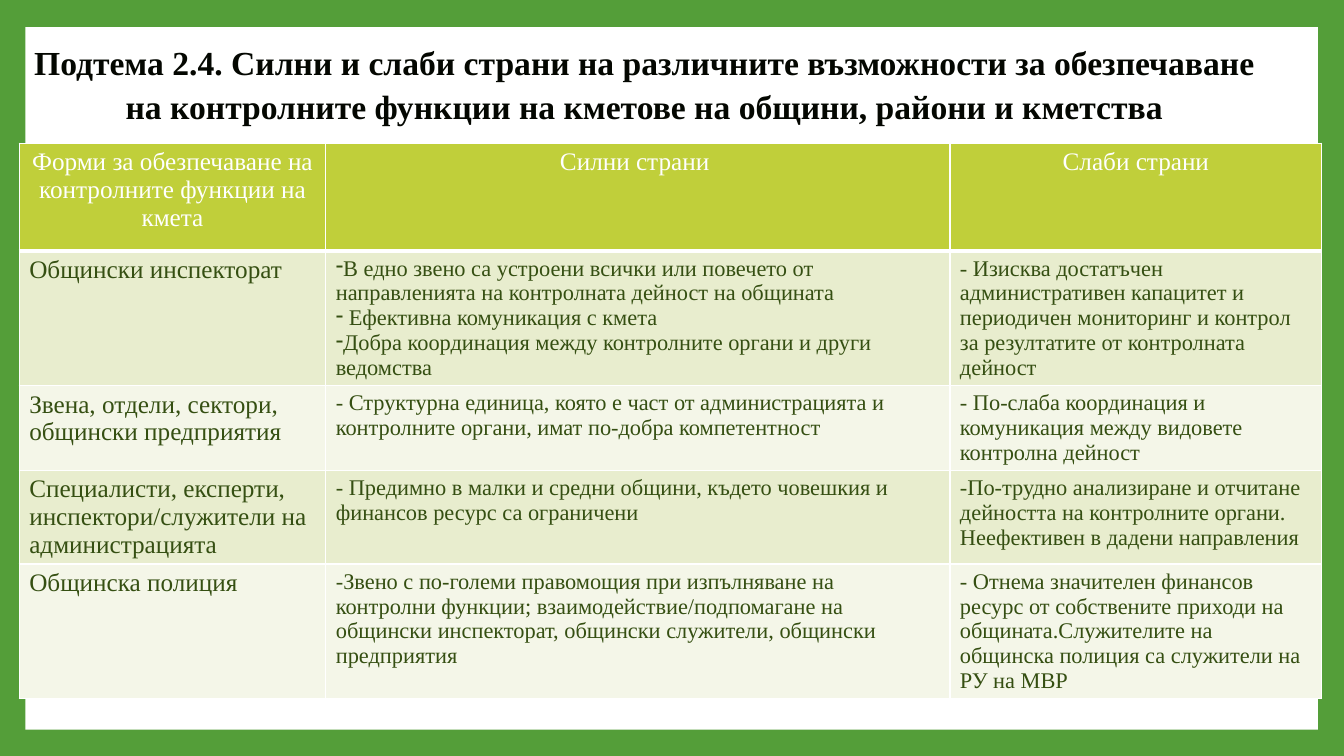
from pptx import Presentation
from pptx.dml.color import RGBColor
from pptx.enum.shapes import MSO_SHAPE as Preset
from pptx.enum.text import MSO_ANCHOR as Anchor, PP_ALIGN as Align
from pptx.oxml.ns import qn
from pptx.util import Inches, Pt
from lxml.etree import SubElement

WIDTH, HEIGHT = Inches(13.33), Inches(7.5)
FONT = "Times New Roman"
GREEN = RGBColor(0x54, 0x9E, 0x39)
WHITE = RGBColor(0xFF, 0xFF, 0xFF)
LIME = RGBColor(0xC0, 0xCF, 0x3A)
BANDS = (RGBColor(0xE8, 0xED, 0xCE), RGBColor(0xF4, 0xF6, 0xE8))
TITLE_INK = RGBColor(0x04, 0x07, 0x01)
BODY_INK = RGBColor(0x35, 0x4F, 0x12)

TITLE = ("Подтема 2.4. Силни и слаби страни на различните възможности за обезпечаване "
         "на контролните функции на кметове на общини, райони и кметства")
COLUMN_SHARES = (22.81, 46.44, 27.68)
ROW_SHARES = (14.27, 17.33, 10.93, 10.93, 17.33)
HEADINGS = ("Форми за обезпечаване на контролните функции на кмета",
            "Силни страни ", "Слаби страни")
FORMS = (
    ("Общински инспекторат",
     ("В едно звено са устроени всички или повечето от направленията на контролната "
      "дейност на общината",
      " Ефективна комуникация с кмета",
      "Добра координация между контролните органи и други ведомства"),
     "- Изисква достатъчен административен капацитет и периодичен мониторинг и контрол "
     "за резултатите от контролната дейност"),
    ("Звена, отдели, сектори, общински предприятия",
     "- Структурна единица, която е част от администрацията и контролните органи, "
     "имат по-добра компетентност",
     "- По-слаба координация и комуникация между видовете контролна дейност"),
    ("Специалисти, експерти, инспектори/служители на администрацията",
     "- Предимно в малки и средни общини, където човешкия и финансов ресурс са ограничени",
     "-По-трудно анализиране и отчитане дейността на контролните органи. "
     "Неефективен в дадени направления"),
    ("Общинска полиция",
     "-Звено с по-големи правомощия при изпълняване на контролни функции; "
     "взаимодействие/подпомагане на  общински инспекторат, общински служители, "
     "общински предприятия",
     "- Отнема значителен финансов ресурс от собствените приходи на общината."
     "Служителите на общинска полиция са служители на РУ на МВР"),
)


def across(percent):
    return round(WIDTH * percent / 100)


def down(percent):
    return round(HEIGHT * percent / 100)


def write(para, text, size, color, bold=False, align=Align.LEFT):
    para.alignment = align
    span = para.add_run()
    span.text = text
    font = span.font
    font.name, font.size, font.bold = FONT, Pt(size), bold
    font.color.rgb = color


def add_dash_bullet(para):
    settings = para._p.get_or_add_pPr()
    settings.set("marL", "0")
    settings.set("indent", "0")
    SubElement(settings, qn("a:buFontTx"))
    SubElement(settings, qn("a:buChar"), char="-")


def add_borders(cell, bottom=1):
    settings = cell._tc.get_or_add_tcPr()
    for side, points in (("L", 1), ("R", 1), ("T", 1), ("B", bottom)):
        line = SubElement(settings, qn(f"a:ln{side}"), w=str(Pt(points)))
        fill = SubElement(line, qn("a:solidFill"))
        SubElement(fill, qn("a:srgbClr"), val=str(WHITE))


def paint(cell, color, bottom=1):
    add_borders(cell, bottom)
    cell.fill.solid()
    cell.fill.fore_color.rgb = color


def fill_cell(cell, content, size):
    if isinstance(content, str):
        write(cell.text_frame.paragraphs[0], content, size, BODY_INK)
        return
    for index, text in enumerate(content):
        frame = cell.text_frame
        para = frame.add_paragraph() if index else frame.paragraphs[0]
        write(para, text, size, BODY_INK)
        add_dash_bullet(para)


def add_panel(page):
    panel = page.shapes.add_shape(Preset.RECTANGLE, across(1.88), down(3.6),
                                  across(96.17), down(92.93))
    panel.shadow.inherit = False
    panel.fill.solid()
    panel.fill.fore_color.rgb = WHITE
    panel.line.fill.background()


def add_comparison(page):
    table = page.shapes.add_table(
        len(ROW_SHARES), len(COLUMN_SHARES), across(1.43), down(18.93),
        across(sum(COLUMN_SHARES)), down(sum(ROW_SHARES))).table
    for column, share in zip(table.columns, COLUMN_SHARES):
        column.width = across(share)
    for row, share in zip(table.rows, ROW_SHARES):
        row.height = down(share)
    for column, heading in enumerate(HEADINGS):
        cell = table.cell(0, column)
        paint(cell, LIME, bottom=3)
        write(cell.text_frame.paragraphs[0], heading, 18, WHITE, align=Align.CENTER)
    for row, contents in enumerate(FORMS, start=1):
        for column, content in enumerate(contents):
            cell = table.cell(row, column)
            paint(cell, BANDS[(row - 1) % 2])
            fill_cell(cell, content, 16 if column else 18)


def place_title(page):
    title = page.shapes.title
    title.left, title.top = across(1.35), down(4.8)
    title.width, title.height = across(93.17), down(12.13)
    frame = title.text_frame
    frame.word_wrap = True
    frame.vertical_anchor = Anchor.MIDDLE
    para = frame.paragraphs[0]
    para.line_spacing = 1.1
    write(para, TITLE, 24, TITLE_INK, bold=True, align=Align.CENTER)
    page.shapes._spTree.append(title._element)


def main():
    deck = Presentation()
    deck.slide_width, deck.slide_height = WIDTH, HEIGHT
    page = deck.slides.add_slide(deck.slide_layouts.get_by_name("Title Only"))
    page.background.fill.solid()
    page.background.fill.fore_color.rgb = GREEN
    add_panel(page)
    add_comparison(page)
    place_title(page)
    deck.save("out.pptx")


if __name__ == "__main__":
    main()
